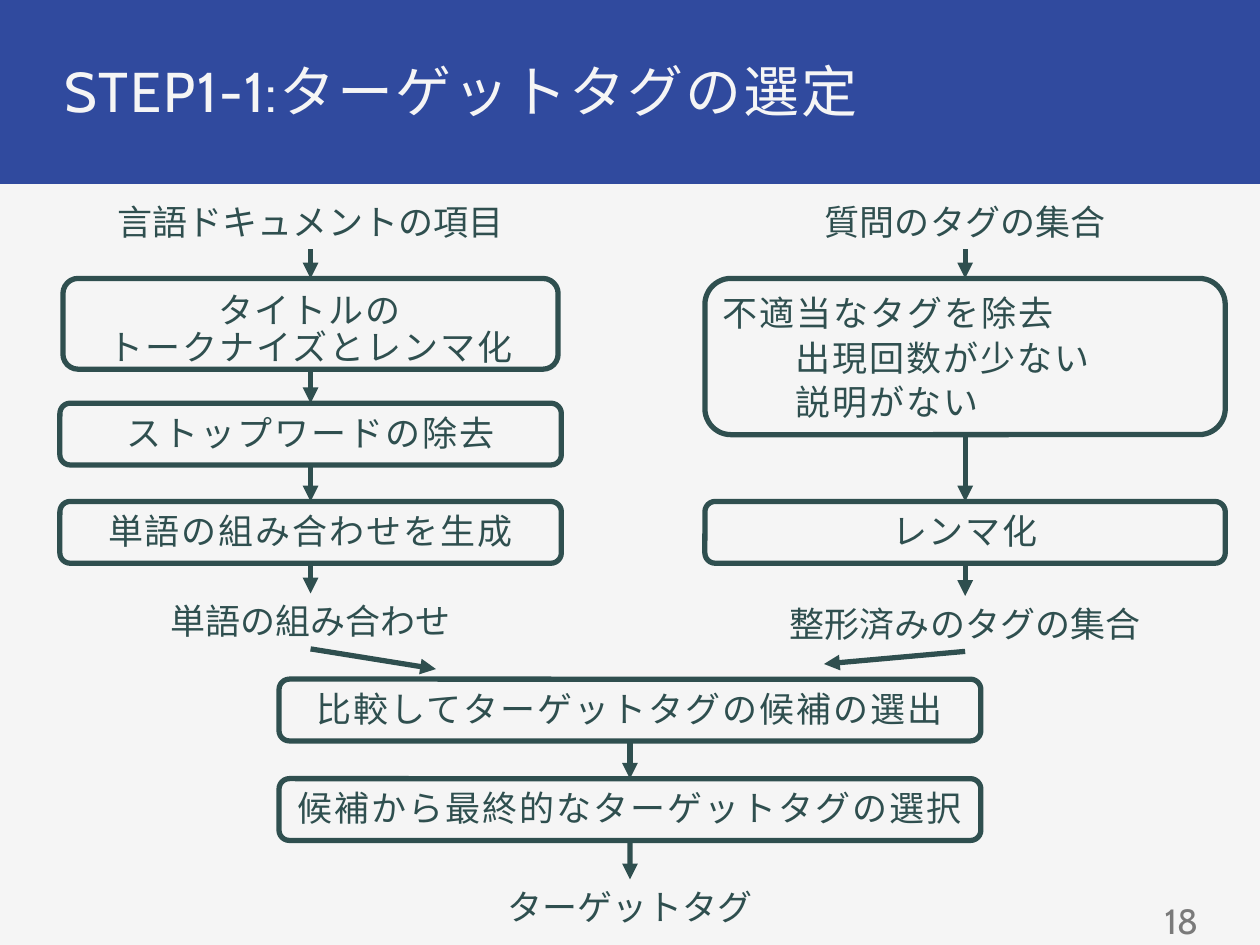
from itertools import pairwise

from lxml.etree import SubElement
from pptx import Presentation
from pptx.dml.color import RGBColor
from pptx.enum.shapes import MSO_CONNECTOR as Line, MSO_SHAPE as Shape
from pptx.enum.text import MSO_ANCHOR as Anchor, MSO_AUTO_SIZE as AutoSize, PP_ALIGN as Align
from pptx.oxml.ns import qn
from pptx.util import Inches, Pt

COLORS = {"paper": "F5F5F5", "band": "304A9E", "ink": "2F4F4F", "page": "7A7A7A"}
FONT = "Cabin"
COLS, ROWS = 100, 75
LEFT, MID, RIGHT = 24.65, 50, 76.6
BOX_H, LABEL_H = 4.9, 4.4
TOP = 15.4


def grid(*cells):
    """Turn grid counts of a tenth of an inch into lengths."""
    return [Inches(c / 10) for c in cells]


def color(name):
    """Look up a named colour."""
    return RGBColor.from_string(COLORS[name])


def set_margins(tf, left, top, right, bottom):
    """Set the four text insets in grid cells."""
    tf.margin_left, tf.margin_top, tf.margin_right, tf.margin_bottom = grid(left, top, right, bottom)


def style(p, align, size=20, ink="ink", spacing=None):
    """Format a paragraph, with optional letter spacing in points."""
    p.alignment = align
    p.font.name, p.font.size = FONT, Pt(size)
    p.font.color.rgb = color(ink)
    if spacing:
        p.line_spacing = 0.9
        for r in p.runs:
            r.font.name, r.font.size = FONT, Pt(size)
            r._r.get_or_add_rPr().set("spc", str(round(spacing * 100)))


def add_band(s):
    """Draw the title band across the slide."""
    sp = s.shapes.add_shape(Shape.RECTANGLE, *grid(0, 0, COLS, 14.6))
    sp.shadow.inherit = False
    sp.fill.solid()
    sp.fill.fore_color.rgb = color("band")
    sp.line.fill.background()


def add_title(s, text):
    """Write the slide title on the band."""
    tf = s.shapes.add_textbox(*grid(4.3, 4.4, 91.3, 5.9)).text_frame
    tf.word_wrap, tf.vertical_anchor = True, Anchor.MIDDLE
    set_margins(tf, 0.8, 0.8, 0.8, 0.6)
    tf.text = text
    style(tf.paragraphs[0], Align.LEFT, 32, "paper", 1.1)


def add_page_number(s, text):
    """Write the page number at the bottom right."""
    tf = s.shapes.add_textbox(*grid(73.2, 71.1, 22.5, 3.9)).text_frame
    tf.word_wrap, tf.vertical_anchor = True, Anchor.MIDDLE
    set_margins(tf, 0.6, 0.6, 0.6, 0.6)
    tf.text = text
    style(tf.paragraphs[0], Align.RIGHT, ink="page")


def add_label(s, text, center, top, width):
    """Add a plain centred label and return it."""
    sp = s.shapes.add_textbox(*grid(center - width / 2, top, width, LABEL_H))
    tf = sp.text_frame
    tf.word_wrap, tf.auto_size = True, AutoSize.SHAPE_TO_FIT_TEXT
    tf.text = text
    style(tf.paragraphs[0], Align.CENTER)
    return sp


def add_box(s, text, center, top, width, height=BOX_H, details=()):
    """Add an outlined step, with indented details if any, and return it."""
    sp = s.shapes.add_shape(Shape.ROUNDED_RECTANGLE, *grid(center - width / 2, top, width, height))
    sp.shadow.inherit = False
    sp.fill.background()
    sp.line.color.rgb, sp.line.width = color("ink"), Pt(3)
    tf = sp.text_frame
    tf.word_wrap, tf.vertical_anchor = bool(details), Anchor.TOP
    set_margins(tf, 0.8, 0.8, 0.8, 0.8)
    for i, line in enumerate((text, *details)):
        p = tf.add_paragraph() if i else tf.paragraphs[0]
        p.text = line
        p.space_before, p.space_after = Pt(3), Pt(1)
        style(p, Align.LEFT if details else Align.CENTER, spacing=1.1)
        if i:
            p._p.get_or_add_pPr().set("marL", str(Inches(0.58)))
    return sp


def add_arrow(s, start, end=None, point=(0, 0)):
    """Draw an arrow from the bottom of a shape to the top of another or to a point."""
    c = s.shapes.add_connector(Line.STRAIGHT, 0, 0, *grid(*point))
    c.begin_connect(start, 2)
    if end is not None:
        c.end_connect(end, 0)
    c.line.color.rgb, c.line.width = color("ink"), Pt(3)
    SubElement(c.line._get_or_add_ln(), qn("a:tailEnd"), type="triangle")
    SubElement(c._element.spPr, qn("a:effectLst"))


def add_chain(s, *steps):
    """Join each step to the next one."""
    for start, end in pairwise(steps):
        add_arrow(s, start, end)


def main():
    """Build the slide."""
    prs = Presentation()
    prs.slide_width, prs.slide_height = grid(COLS, ROWS)
    s = prs.slides.add_slide(prs.slide_layouts[6])
    s.background.fill.solid()
    s.background.fill.fore_color.rgb = color("paper")
    add_band(s)
    add_title(s, "STEP1-1:ターゲットタグの選定")
    add_page_number(s, "18")

    words = add_label(s, "単語の組み合わせ", LEFT, 47.1, 33.5)
    add_chain(
        s,
        add_label(s, "言語ドキュメントの項目", LEFT, TOP, 33.5),
        add_box(s, "タイトルの\vトークナイズとレンマ化", LEFT, 22.1, 39.3, 7.2),
        add_box(s, "ストップワードの除去", LEFT, 32, 39.8),
        add_box(s, "単語の組み合わせを生成", LEFT, 39.8, 39.8),
        words,
    )
    tags = add_label(s, "整形済みのタグの集合", RIGHT, 47.3, 36.8)
    add_chain(
        s,
        add_label(s, "質問のタグの集合", RIGHT, TOP, 25.2),
        add_box(s, "不適当なタグを除去", RIGHT, 22.1, 41.3, 12.4, ("出現回数が少ない", "説明がない")),
        add_box(s, "レンマ化", RIGHT, 39.8, 41.3),
        tags,
    )
    add_chain(
        s,
        add_box(s, "比較してターゲットタグの候補の選出", MID, 53.9, 55.7),
        add_box(s, "候補から最終的なターゲットタグの選択", MID, 61.8, 55.7),
        add_label(s, "ターゲットタグ", MID, 69.8, 63.5),
    )
    add_arrow(s, words, point=(34.6, 53.1))
    add_arrow(s, tags, point=(65.4, 52.7))
    prs.save("out.pptx")


if __name__ == "__main__":
    main()
